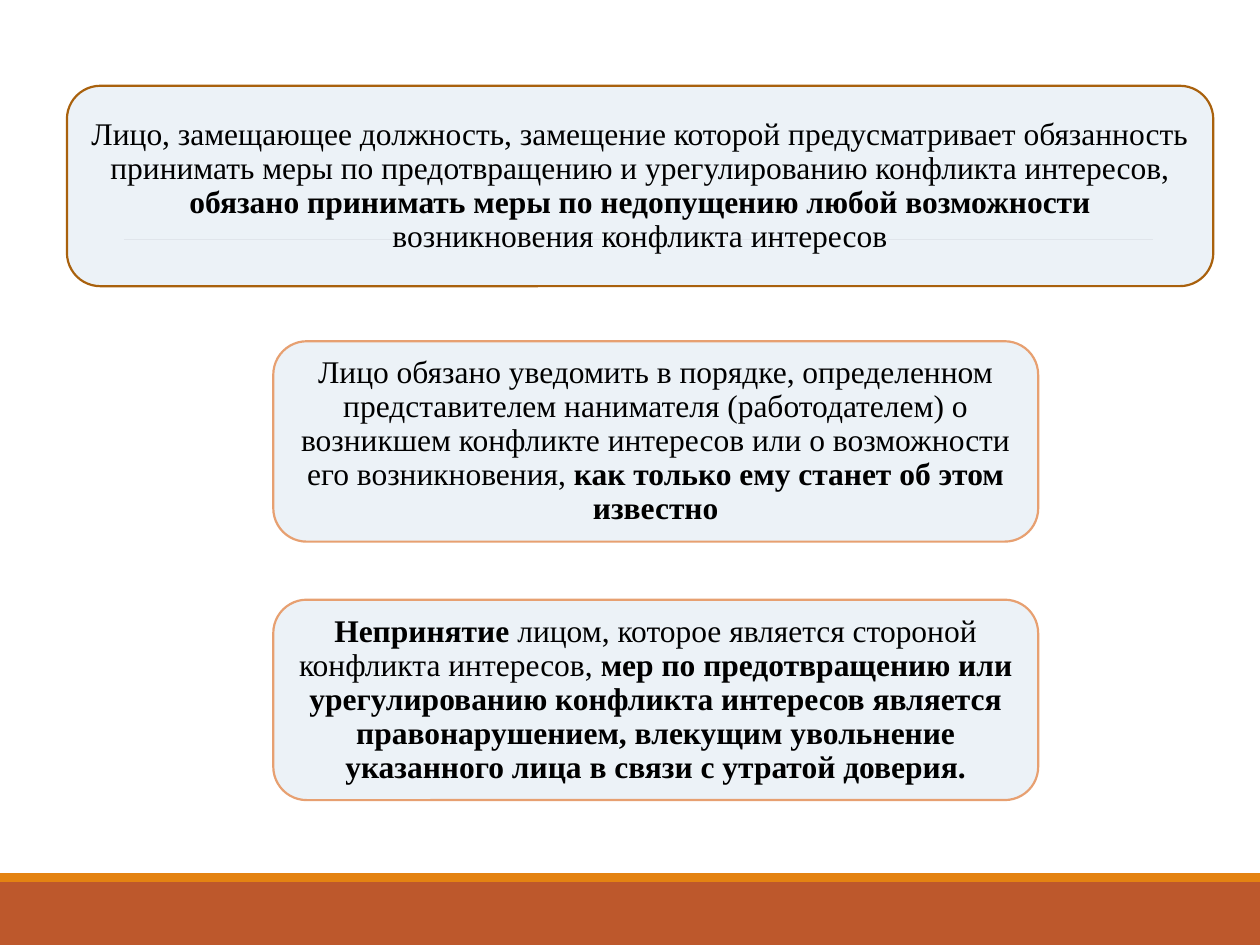
from lxml import etree
from pptx import Presentation
from pptx.dml.color import RGBColor as Rgb
from pptx.enum import shapes as kinds, text as txt
from pptx.oxml import ns
from pptx.util import Cm, Pt


class Theme:
    font = "Times New Roman"
    size = Pt(18)
    ink = Rgb(0, 0, 0)
    panel = Rgb(0xEB, 0xF1, 0xF7)
    alpha = 90
    duty = Rgb(0xA9, 0x61, 0x0D)
    step = Rgb(0xE7, 0xA0, 0x71)
    rule = Rgb(0x80, 0x80, 0x80)
    band = Rgb(0xBD, 0x58, 0x2C)
    strip = Rgb(0xE4, 0x83, 0x12)


def add_block(kind, left, top, width, height, fill):
    block = slide.shapes.add_shape(kind, Cm(left), Cm(top), Cm(width), Cm(height))
    block.shadow.inherit = False
    block.fill.solid()
    block.fill.fore_color.rgb = fill
    block.line.fill.background()
    return block


deck = Presentation()
deck.slide_width, deck.slide_height = Cm(25.4), Cm(19.05)
slide = deck.slides.add_slide(deck.slide_layouts[6])

# Rule and footer bands
rule = slide.shapes.add_connector(
    kinds.MSO_CONNECTOR.STRAIGHT, Cm(2.49), Cm(4.83), Cm(23.24), Cm(4.83))
rule.line.color.rgb = Theme.rule
rule.line.width = Pt(0.5)
etree.SubElement(rule._element.spPr, ns.qn("a:effectLst"))

for top, height, fill in [(17.78, 1.27, Theme.band), (17.6, 0.18, Theme.strip)]:
    add_block(kinds.MSO_SHAPE.RECTANGLE, 0, top, 25.4, height, fill)

# Panels: left, top, width, outline, runs as (wording, bold)
panels = [
    (1.35, 1.73, 23.11, Theme.duty, [
        ("Лицо, замещающее должность, замещение которой предусматривает обязанность "
         "принимать меры по предотвращению и урегулированию конфликта интересов, ", False),
        ("обязано принимать меры по недопущению любой возможности ", True),
        ("возникновения конфликта интересов", False)]),
    (5.51, 6.88, 15.42, Theme.step, [
        ("Лицо обязано уведомить в порядке, определенном представителем нанимателя "
         "(работодателем) о возникшем конфликте интересов или о возможности его "
         "возникновения, ", False),
        ("как только ему станет об этом известно", True)]),
    (5.51, 12.09, 15.42, Theme.step, [
        ("Непринятие", True),
        (" лицом, которое является стороной конфликта интересов, ", False),
        ("мер по предотвращению или урегулированию конфликта интересов является "
         "правонарушением, влекущим увольнение указанного лица в связи с утратой "
         "доверия.", True)]),
]

for left, top, width, edge, runs in panels:
    panel = add_block(
        kinds.MSO_SHAPE.ROUNDED_RECTANGLE, left, top, width, 4.04, Theme.panel)
    tint = panel._element.spPr.find(ns.qn("a:solidFill"))[0]
    etree.SubElement(tint, ns.qn("a:alpha"), val=str(Theme.alpha * 1000))
    panel.line.color.rgb = edge
    panel.line.width = Pt(1.25)

    frame = panel.text_frame
    frame.word_wrap = True
    frame.vertical_anchor = txt.MSO_ANCHOR.MIDDLE
    frame.margin_left = frame.margin_right = Cm(0.18)
    frame.margin_top = frame.margin_bottom = Cm(0.18)

    para = frame.paragraphs[0]
    para.alignment = txt.PP_ALIGN.CENTER
    para.line_spacing = 0.9
    para.font.name = Theme.font
    para.font.size = Theme.size
    para.font.color.rgb = Theme.ink
    for words, bold in runs:
        run = para.add_run()
        run.text = words
        run.font.bold = bold

deck.save("out.pptx")
